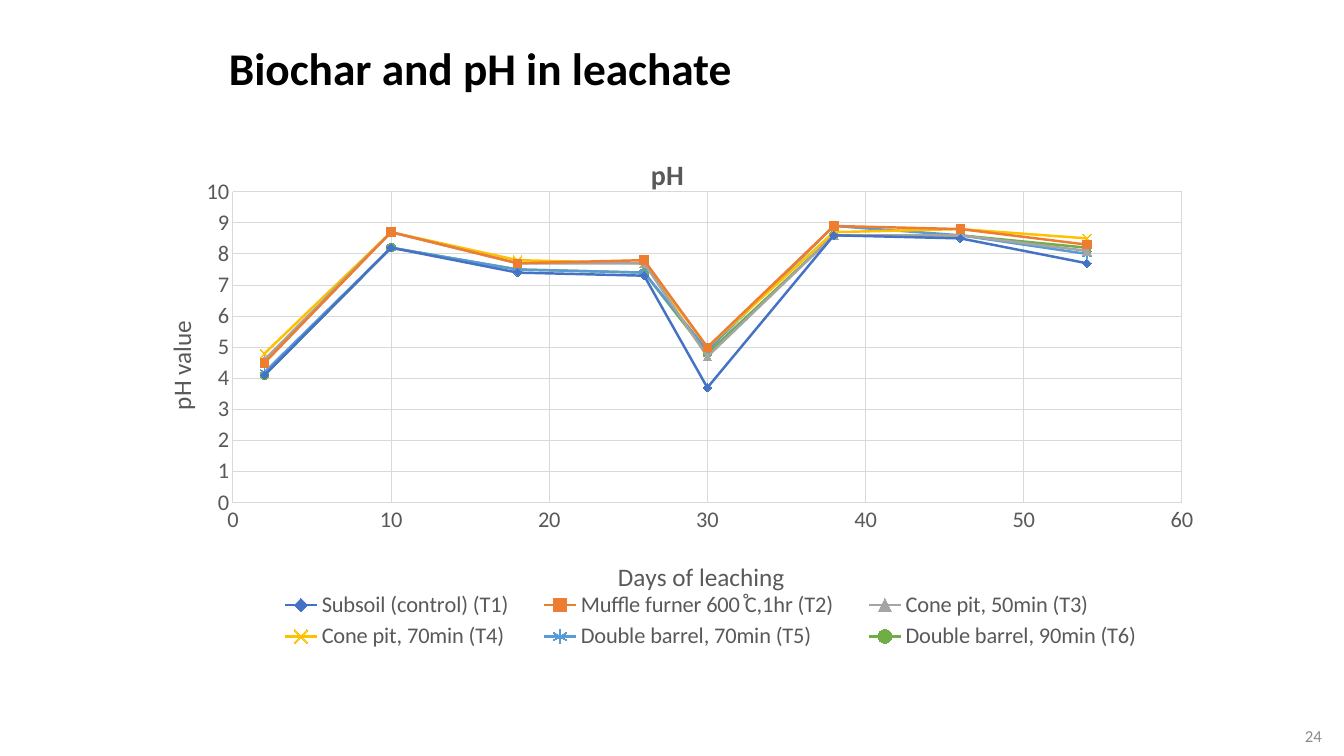
from lxml import etree
from pptx import Presentation
from pptx.chart import data as cd
from pptx.dml.color import RGBColor
from pptx.enum import chart as ec, text as et
from pptx.oxml import ns
from pptx.util import Inches, Pt

HUES = {"ink": "000000", "text": "595959", "grid": "D9D9D9", "page": "8C8C8C",
        "T1": "4472C4", "T2": "ED7D31", "T3": "A5A5A5",
        "T4": "FFC000", "T5": "5B9BD5", "T6": "70AD47"}
DAYS = [2, 10, 18, 26, 30, 38, 46, 54]
RUNS = {
    "T1": ("Subsoil (control) (T1)", "DIAMOND", [4.1, 8.2, 7.4, 7.3, 3.7, 8.6, 8.5, 7.7]),
    "T2": ("Muffle furner 600 ̊C,1hr (T2)", "SQUARE", [4.5, 8.7, 7.7, 7.8, 5, 8.9, 8.8, 8.3]),
    "T3": ("Cone pit, 50min (T3)", "TRIANGLE", [4.6, 8.7, 7.7, 7.7, 4.7, 8.6, 8.6, 8.1]),
    "T4": ("Cone pit, 70min (T4)", "X", [4.8, 8.7, 7.8, 7.7, 5, 8.7, 8.8, 8.5]),
    "T5": ("Double barrel, 70min (T5)", "STAR", [4.2, 8.2, 7.5, 7.4, 4.9, 8.9, 8.6, 8]),
    "T6": ("Double barrel, 90min (T6)", "CIRCLE", [4.1, 8.2, 7.5, 7.4, 4.8, 8.6, 8.6, 8.2]),
}


def assign(obj, form):
    """Set each attribute named in a dict."""
    for key, val in form.items():
        setattr(obj, key, val)


def style(font, size, hue, bold=False):
    """Format a font."""
    assign(font, {"name": "Calibri", "size": Pt(size), "bold": bold})
    font.color.rgb = RGBColor.from_string(HUES[hue])


def stroke(line, hue, width):
    """Format a line."""
    line.color.rgb = RGBColor.from_string(HUES[hue])
    line.width = Pt(width)


def place(node, after, **spots):
    """Give a chart part a manual layout."""
    for old in node.findall(ns.qn("c:layout")):
        node.remove(old)
    lay = etree.Element(ns.qn("c:layout"))
    man = etree.SubElement(lay, ns.qn("c:manualLayout"))
    for key, val in spots.items():
        etree.SubElement(man, ns.qn("c:" + key)).set("val", str(val))
    prior = node.find(ns.qn(after)) if after else None
    node.insert(0 if prior is None else node.index(prior) + 1, lay)


def label(owner, words, size, x, y, bold=False, turn=0):
    """Write and place a chart or axis title."""
    frame = owner.text_frame
    frame.text = words
    style(frame.paragraphs[0].runs[0].font, size, "text", bold)
    node = owner._element
    body = next(node.iter(ns.qn("a:bodyPr")))
    body.set("rot", str(turn * 60000))
    body.set("vert", "horz")
    place(node, "c:tx", xMode="edge", yMode="edge", x=x, y=y)


def scale(axis, top, step, words, x, y, turn=0):
    """Format one axis."""
    assign(axis, {"minimum_scale": 0, "maximum_scale": top, "major_unit": step,
                  "has_major_gridlines": True, "has_title": True,
                  "major_tick_mark": ec.XL_TICK_MARK.NONE,
                  "minor_tick_mark": ec.XL_TICK_MARK.NONE})
    for line in (axis.format.line, axis.major_gridlines.format.line):
        stroke(line, "grid", 0.75)
    style(axis.tick_labels.font, 16, "text")
    label(axis.axis_title, words, 18, x, y, turn=turn)


def trace(row, key, mark):
    """Format one series."""
    row.smooth = False
    stroke(row.format.line, key, 1.75)
    dot = row.marker
    assign(dot, {"style": ec.XL_MARKER_STYLE[mark], "size": 6})
    stroke(dot.format.line, key, 0.75)
    if mark in ("X", "STAR"):
        dot.format.fill.background()
    else:
        dot.format.fill.solid()
        dot.format.fill.fore_color.rgb = RGBColor.from_string(HUES[key])


def heading(slide, box):
    """Fill the title placeholder."""
    title = slide.shapes.title
    assign(title, dict(zip(("left", "top", "width", "height"), map(Inches, box))))
    frame = title.text_frame
    assign(frame, {"vertical_anchor": et.MSO_ANCHOR.TOP, "word_wrap": True,
                   "auto_size": et.MSO_AUTO_SIZE.NONE})
    frame.text = "Biochar and pH in leachate"
    para = frame.paragraphs[0]
    assign(para, {"alignment": et.PP_ALIGN.LEFT, "line_spacing": 1.15, "space_after": Pt(10)})
    style(para.runs[0].font, 32.4, "ink", True)


def graph(slide, box):
    """Draw the pH chart."""
    data = cd.XyChartData()
    for name, _, vals in RUNS.values():
        row = data.add_series(name)
        for day, val in zip(DAYS, vals):
            row.add_data_point(day, val)
    kind = ec.XL_CHART_TYPE.XY_SCATTER_LINES
    chart = slide.shapes.add_chart(kind, *map(Inches, box), data).chart
    style(chart.font, 10, "ink")
    assign(chart, {"has_title": True, "has_legend": True})
    label(chart.chart_title, "pH", 20, 0.48, 0.05, True)
    scale(chart.category_axis, 60, 10, "Days of leaching", 0.45, 0.78)
    scale(chart.value_axis, 10, 1, "pH value", 0.03, 0.35, -90)
    plot = chart.plots[0]
    plot.vary_by_categories = False
    for row, (key, (_, mark, _)) in zip(plot.series, RUNS.items()):
        trace(row, key, mark)
    key = chart.legend
    assign(key, {"position": ec.XL_LEGEND_POSITION.TOP, "include_in_layout": False})
    style(key.font, 16, "text")
    place(key._element, "c:legendPos", xMode="edge", yMode="edge", x=0.12, y=0.84, w=0.84, h=0.12)
    area = chart._chartSpace.find(".//" + ns.qn("c:plotArea"))
    place(area, None, layoutTarget="inner", xMode="edge", yMode="edge",
          x=0.098, y=0.126, w=0.878, h=0.561)


def folio(slide, box):
    """Write the page number."""
    frame = slide.shapes.add_textbox(*map(Inches, box)).text_frame
    assign(frame, {"word_wrap": True, "vertical_anchor": et.MSO_ANCHOR.MIDDLE, "text": "24"})
    para = frame.paragraphs[0]
    para.alignment = et.PP_ALIGN.RIGHT
    style(para.runs[0].font, 12, "page")


def main():
    """Build the slide."""
    deck = Presentation()
    assign(deck, {"slide_width": Inches(13.33), "slide_height": Inches(7.5)})
    slide = deck.slides.add_slide(deck.slide_layouts[5])
    heading(slide, (2.17, 0.27, 10.19, 1.4))
    folio(slide, (10.21, 7.1, 3, 0.4))
    graph(slide, (1.26, 1.21, 10.72, 5.5))
    deck.save("out.pptx")


if __name__ == "__main__":
    main()
